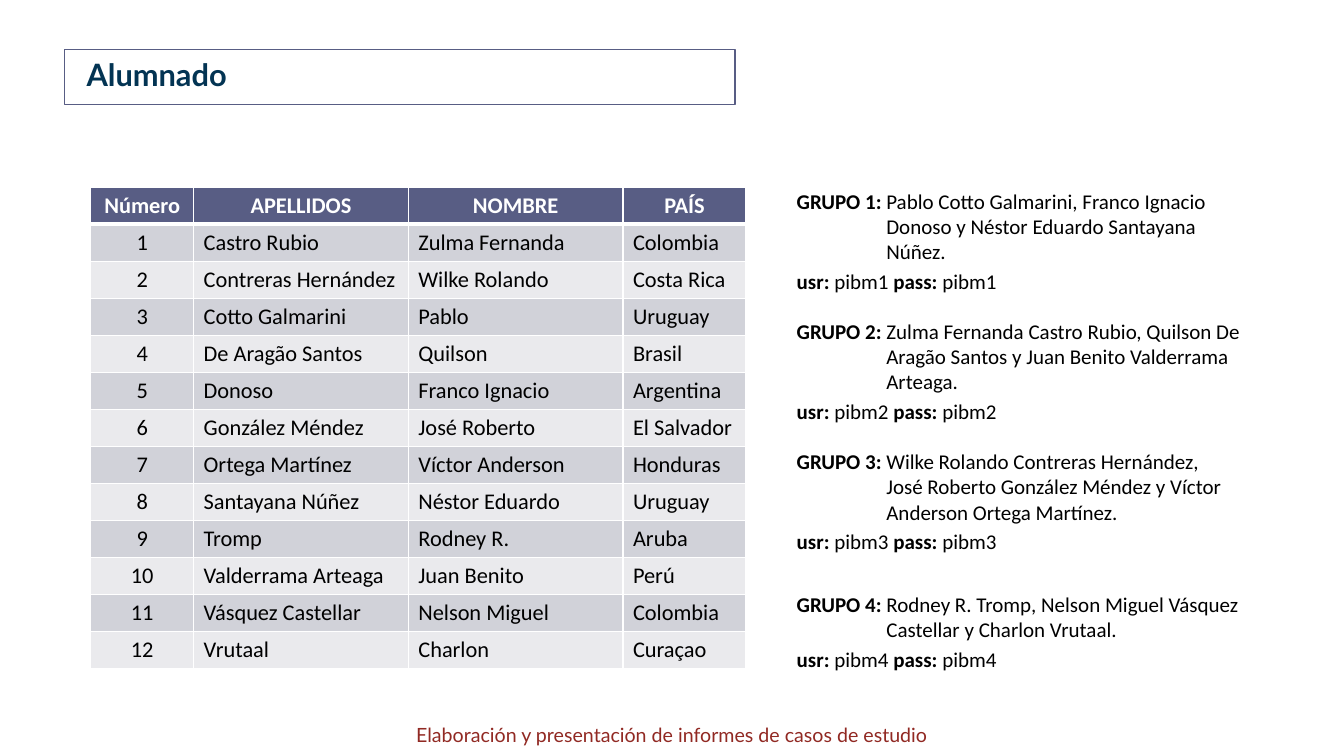
"""Build the slide that lists the students and their work groups."""
from dataclasses import dataclass

import pptx
import pptx.dml.color
import pptx.enum.shapes
import pptx.enum.text
import pptx.oxml
import pptx.oxml.ns
import pptx.util
from lxml import etree
from pptx.util import Cm

ALIGN = pptx.enum.text.PP_ALIGN
MIDDLE = pptx.enum.text.MSO_ANCHOR.MIDDLE
ROUNDED = pptx.enum.shapes.MSO_SHAPE.ROUNDED_RECTANGLE


@dataclass(frozen=True)
class Theme:
    white: str = "FFFFFF"
    black: str = "000000"
    indigo: str = "585D84"
    navy: str = "033453"
    red: str = "912923"
    bands: tuple = ("D1D2D9", "EAEAED")
    heading_font: str = "Lato"
    body_font: str = "Calibri"
    title_size: int = 22
    table_size: int = 16
    group_size: int = 15
    footer_size: int = 14


THEME = Theme()
HEADERS = ("Número", "APELLIDOS", "NOMBRE", "PAÍS")
COLUMN_WIDTHS = (2.59, 5.41, 5.41, 3.1)
ROW_HEIGHT = 0.93
STUDENTS = (
    ("Castro Rubio", "Zulma Fernanda", "Colombia"),
    ("Contreras Hernández", "Wilke Rolando", "Costa Rica"),
    ("Cotto Galmarini", "Pablo", "Uruguay"),
    ("De Aragão Santos", "Quilson", "Brasil"),
    ("Donoso", "Franco Ignacio", "Argentina"),
    ("González Méndez", "José Roberto", "El Salvador"),
    ("Ortega Martínez", "Víctor Anderson", "Honduras"),
    ("Santayana Núñez", "Néstor Eduardo", "Uruguay"),
    ("Tromp", "Rodney R.", "Aruba"),
    ("Valderrama Arteaga", "Juan Benito", "Perú"),
    ("Vásquez Castellar", "Nelson Miguel", "Colombia"),
    ("Vrutaal", "Charlon", "Curaçao"),
)
GROUPS = (
    "Pablo Cotto Galmarini, Franco Ignacio Donoso y Néstor Eduardo Santayana Núñez.",
    "Zulma Fernanda Castro Rubio, Quilson De Aragão Santos y Juan Benito Valderrama Arteaga.",
    "Wilke Rolando Contreras Hernández, José Roberto González Méndez y Víctor Anderson Ortega Martínez.",
    "Rodney R. Tromp, Nelson Miguel Vásquez Castellar y Charlon Vrutaal.",
)
GROUP_TOP, GROUP_STEP = 4.62, 3.28


def rgb(value):
    return pptx.dml.color.RGBColor.from_string(value)


def set_attrs(target, values):
    for name, value in values.items():
        setattr(target, name, value)


def fill(target, color):
    target.fill.solid()
    target.fill.fore_color.rgb = rgb(color)


def add_run(p, text, font, size, color, bold=False):
    r = p.add_run()
    r.text = text
    set_attrs(r.font, {"name": font, "size": pptx.util.Pt(size), "bold": bold})
    r.font.color.rgb = rgb(color)


def set_indent(p, left, first=0):
    pPr = p._p.get_or_add_pPr()
    pPr.set("marL", str(Cm(left)))
    pPr.set("indent", str(Cm(first)))


def add_title(s, text):
    sp = s.shapes.title
    set_attrs(sp, {"left": Cm(1.63), "top": Cm(1.24), "width": Cm(16.89), "height": Cm(1.4)})
    geom = etree.Element(pptx.oxml.ns.qn("a:prstGeom"), prst="roundRect")
    etree.SubElement(geom, pptx.oxml.ns.qn("a:avLst"))
    sp._element.spPr.insert(1, geom)
    fill(sp, THEME.white)
    sp.line.color.rgb = rgb(THEME.indigo)
    sp.line.width = pptx.util.Pt(1)
    tf = sp.text_frame
    set_attrs(tf, {"vertical_anchor": MIDDLE, "word_wrap": True,
                   "auto_size": pptx.enum.text.MSO_AUTO_SIZE.NONE})
    p = tf.paragraphs[0]
    set_attrs(p, {"alignment": ALIGN.LEFT, "line_spacing": 0.9})
    set_indent(p, 0.3)
    add_run(p, text, THEME.heading_font, THEME.title_size, THEME.navy, True)


def add_footer(s, text):
    tf = s.shapes.add_textbox(Cm(10.16), Cm(18.08), Cm(13.55), Cm(0.86)).text_frame
    tf.word_wrap = True
    p = tf.paragraphs[0]
    p.alignment = ALIGN.CENTER
    add_run(p, text, THEME.heading_font, THEME.footer_size, THEME.red)


def set_borders(cell, widths):
    tcPr = cell._tc.get_or_add_tcPr()
    for i, (side, width) in enumerate(widths.items()):
        ln = etree.Element(pptx.oxml.ns.qn(f"a:ln{side}"), w=str(pptx.util.Pt(width)))
        solid = etree.SubElement(ln, pptx.oxml.ns.qn("a:solidFill"))
        etree.SubElement(solid, pptx.oxml.ns.qn("a:srgbClr"), val=THEME.white)
        tcPr.insert(i, ln)


def add_student_table(s):
    rows = [HEADERS] + [(str(n), *student) for n, student in enumerate(STUDENTS, 1)]
    table = s.shapes.add_table(len(rows), len(HEADERS), Cm(2.29), Cm(4.72),
                               Cm(sum(COLUMN_WIDTHS)), Cm(ROW_HEIGHT * len(rows))).table
    for column, width in zip(table.columns, COLUMN_WIDTHS):
        column.width = Cm(width)
    for i, values in enumerate(rows):
        table.rows[i].height = Cm(ROW_HEIGHT)
        header = i == 0
        for j, text in enumerate(values):
            cell = table.cell(i, j)
            fill(cell, THEME.indigo if header else THEME.bands[(i - 1) % 2])
            set_borders(cell, {"L": 1, "R": 1, "T": 3 if i == 1 else 1, "B": 3 if header else 1})
            p = cell.text_frame.paragraphs[0]
            p.alignment = ALIGN.CENTER if header or j == 0 else ALIGN.LEFT
            add_run(p, text, THEME.body_font, THEME.table_size,
                    THEME.white if header else THEME.black, header)


def add_group(s, number, members):
    top = GROUP_TOP + (number - 1) * GROUP_STEP
    sp = s.shapes.add_shape(ROUNDED, Cm(19.71), Cm(top), Cm(11.91), Cm(2.9))
    sp.adjustments[0] = 0.14
    sp.shadow.inherit = False
    fill(sp, THEME.white)
    sp.line.fill.background()
    tf = sp.text_frame
    set_attrs(tf, {"vertical_anchor": MIDDLE, "word_wrap": True})
    login = f"pibm{number}"
    lines = (
        ((f"GRUPO {number}: ", members), 3),
        (("usr: ", f"{login} ", "pass: ", login), 0),
    )
    for i, (parts, space) in enumerate(lines):
        p = tf.add_paragraph() if i else tf.paragraphs[0]
        set_attrs(p, {"alignment": ALIGN.LEFT, "space_after": pptx.util.Pt(space)})
        set_indent(p, 2.26, -2.26)
        for j, text in enumerate(parts):
            add_run(p, text, THEME.body_font, THEME.group_size, THEME.black, j % 2 == 0)


def main():
    prs = pptx.Presentation()
    set_attrs(prs, {"slide_width": Cm(33.87), "slide_height": Cm(19.05)})
    s = prs.slides.add_slide(prs.slide_layouts.get_by_name("Title Only"))
    add_title(s, "Alumnado")
    add_footer(s, "Elaboración y presentación de informes de casos de estudio")
    add_student_table(s)
    for number, members in enumerate(GROUPS, 1):
        add_group(s, number, members)
    prs.save("out.pptx")


if __name__ == "__main__":
    main()
